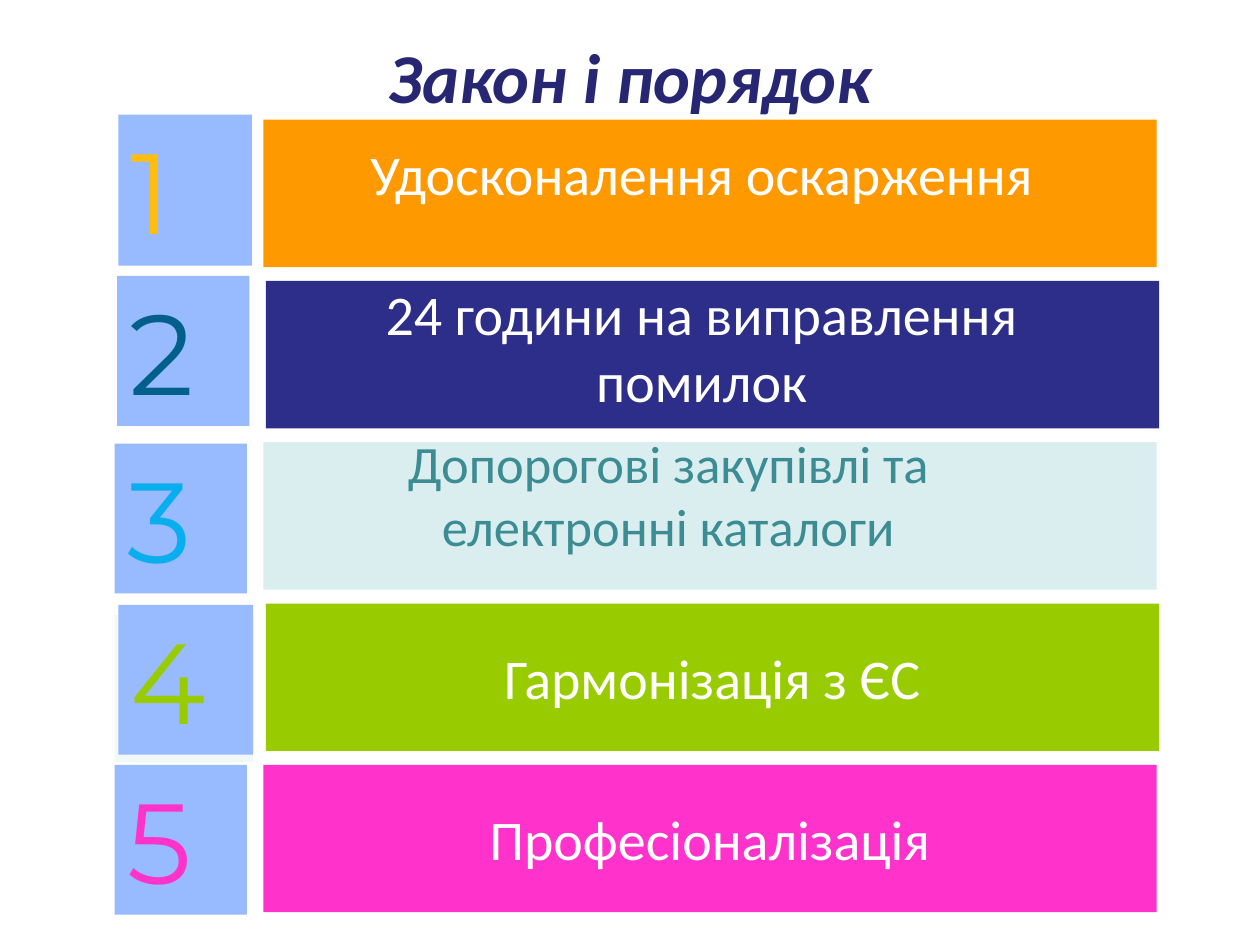
"""Build the slide of five numbered points on a grid of 100 columns by 75 rows."""
from dataclasses import dataclass
from typing import NamedTuple, Optional

from lxml.etree import SubElement
from pptx import Presentation
from pptx.dml.color import RGBColor
from pptx.enum.shapes import MSO_SHAPE
from pptx.enum.text import MSO_ANCHOR, MSO_AUTO_SIZE, PP_ALIGN
from pptx.oxml.ns import qn
from pptx.util import Inches, Pt


class Box(NamedTuple):
    left: float
    top: float
    width: float
    height: float


@dataclass(frozen=True)
class Theme:
    font: str = "Calibri"
    digit_font: str = "Montserrat"
    title: str = "262673"
    tile: str = "98BAFE"
    haze: str = "BBE0E3"
    white: str = "FFFFFF"
    title_size: int = 40
    digit_size: int = 65
    text_size: int = 32
    small_size: int = 30


@dataclass(frozen=True)
class Row:
    text: str
    fill: str
    digit: str
    tile: Box
    left: float
    label: Optional[Box] = None
    color: str = "FFFFFF"
    size: int = 32


THEME = Theme()
WIDE, HIGH = Inches(10), Inches(7.5)
COL, ROW = WIDE / 100, HIGH / 75
TOP, STEP = 9.5, 12.8
BAR_WIDE, BAR_HIGH = 70.9, 11.7
HAZE = Box(9.1, 48.8, 11, 11.7)
HAZE_ROW = 3
ROWS = (
    Row("Удосконалення оскарження", "FF9900", "FFBE0E",
        Box(9.4, 9.1, 10.6, 12), 20.9, Box(23.2, 10.6, 65, 6.3)),
    Row("24 години на виправлення помилок", "2D2D8A", "005F8B",
        Box(9.3, 21.9, 10.5, 11.9), 21.1, Box(23.2, 21.7, 65, 11.7)),
    Row("Допорогові закупівлі та електронні каталоги", "DAEDEF", "09AEEF",
        Box(9.1, 35.2, 10.5, 11.9), 20.9, Box(23.1, 33.7, 59.9, 11.1),
        "3C8C93", THEME.small_size),
    Row("Гармонізація з ЄС", "99CC00", "99CC00",
        Box(9.4, 48, 10.7, 11.9), 21.1),
    Row("Професіоналізація", "FF33CC", "FF33CC",
        Box(9.1, 60.7, 10.5, 11.9), 20.9),
)


def place(box: Box) -> tuple:
    """Turn grid units into lengths."""
    return (round(box.left * COL), round(box.top * ROW),
            round(box.width * COL), round(box.height * ROW))


def block(slide, box: Box, fill: str):
    """Draw a flat rectangle."""
    shape = slide.shapes.add_shape(MSO_SHAPE.RECTANGLE, *place(box))
    shape.shadow.inherit = False
    shape.fill.solid()
    shape.fill.fore_color.rgb = RGBColor.from_string(fill)
    shape.line.fill.background()
    return shape


def write(shape, text: str, font: str, size: int, color: str,
          align=PP_ALIGN.CENTER, anchor=MSO_ANCHOR.TOP, strong: bool = False) -> None:
    """Write one run of text in a shape."""
    frame = shape.text_frame
    frame.word_wrap = True
    frame.auto_size = MSO_AUTO_SIZE.NONE
    frame.vertical_anchor = anchor
    para = frame.paragraphs[0]
    para.alignment = align
    run = para.add_run()
    run.text = text
    run.font.name = font
    run.font.size = Pt(size)
    run.font.bold = run.font.italic = strong
    run.font.color.rgb = RGBColor.from_string(color)


def draw_haze(slide) -> None:
    """Draw the faint block behind a tile."""
    shape = block(slide, HAZE, THEME.haze)
    tint = shape.fill._xPr.find(qn("a:solidFill"))[0]
    SubElement(tint, qn("a:alpha")).set("val", "22000")


def draw_row(slide, index: int, row: Row) -> None:
    """Draw a bar, its numbered tile and its label."""
    bar = block(slide, Box(row.left, TOP + STEP * index, BAR_WIDE, BAR_HIGH), row.fill)
    tile = block(slide, row.tile, THEME.tile)
    write(tile, str(index + 1), THEME.digit_font, THEME.digit_size, row.digit,
          PP_ALIGN.LEFT)
    if row.label:
        label = slide.shapes.add_textbox(*place(row.label))
        write(label, row.text, THEME.font, row.size, row.color)
    else:
        write(bar, row.text, THEME.font, row.size, row.color,
              anchor=MSO_ANCHOR.MIDDLE)


def main() -> None:
    """Build and save the deck."""
    deck = Presentation()
    deck.slide_width, deck.slide_height = WIDE, HIGH
    slide = deck.slides.add_slide(deck.slide_layouts[5])
    title = slide.shapes.title
    title.left, title.top, title.width, title.height = place(Box(5, 3, 90, 6))
    write(title, "Закон і порядок", THEME.font, THEME.title_size, THEME.title,
          anchor=MSO_ANCHOR.MIDDLE, strong=True)
    for index, row in enumerate(ROWS):
        if index == HAZE_ROW:
            draw_haze(slide)
        draw_row(slide, index, row)
    deck.save("out.pptx")


if __name__ == "__main__":
    main()
